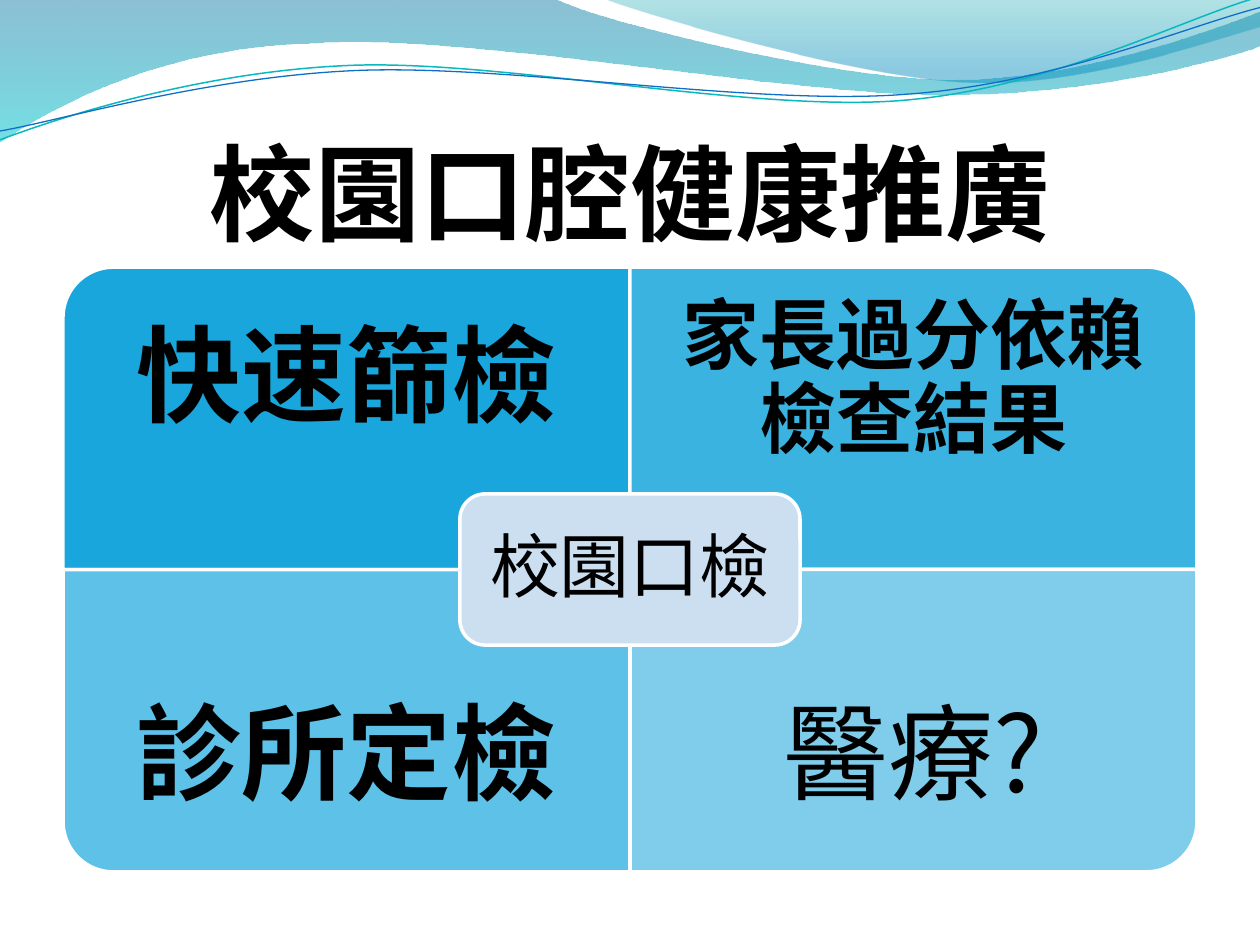
from dataclasses import dataclass

from lxml.etree import SubElement
from pptx import Presentation
from pptx.dml.color import RGBColor
from pptx.enum.shapes import MSO_SHAPE as SHAPE
from pptx.enum.text import MSO_ANCHOR as ANCHOR, PP_ALIGN as ALIGN
from pptx.oxml.ns import qn
from pptx.util import Pt

PX = 9144  # EMU per px, 100 px to the inch


@dataclass(frozen=True)
class Theme:
    black: str = "000000"
    white: str = "FFFFFF"
    panel: str = "009DD9"
    hub: str = "CCDFF1"
    teal_line: str = "0AB8BF"
    blue_line: str = "0F6FC6"
    wave_back: tuple = ((0, "0074A1", 45), (1, "00C6CF", 55))
    wave_front: tuple = ((0, "00A1A9", 30), (0.8, "008BBF", 45))
    cjk: str = "Noto Sans CJK SC"
    serif: str = "TeX Gyre Pagella"
    big: int = 60
    medium: int = 44
    small: int = 40


def px(*values):
    return [round(v * PX) for v in values]


def set_alpha(color_parent, percent):
    for color in color_parent.iter(qn("a:srgbClr")):
        SubElement(color, qn("a:alpha")).set("val", str(percent * 1000))


def bend(sp, segments):
    """Join the three lines of every six-number segment into one cubic curve."""
    outline = next(sp._element.iter(qn("a:path")))
    lines = iter(outline.findall(qn("a:lnTo")))
    for seg in segments:
        first = next(lines)
        if len(seg) == 6:
            first.tag = qn("a:cubicBezTo")
            for line in (next(lines), next(lines)):
                first.append(line[0])
                outline.remove(line)


def write(sp, text, size, bold=False, font=None, anchor=ANCHOR.MIDDLE,
          margins=(0, 0, 0, 0), spacing=0.9):
    tf = sp.text_frame
    tf.word_wrap = True
    tf.vertical_anchor = anchor
    tf.margin_left, tf.margin_top, tf.margin_right, tf.margin_bottom = px(*margins)
    p = tf.paragraphs[0]
    p.alignment = ALIGN.CENTER
    p.line_spacing = spacing
    r = p.add_run()
    r.text = text
    r.font.size = Pt(size)
    r.font.bold = bold
    r.font.name = font or Theme.cjk
    r.font.color.rgb = RGBColor.from_string(Theme.black)
    SubElement(r.font._element, qn("a:ea")).set("typeface", Theme.cjk)


class Painter:
    def __init__(self, slide, theme):
        self.shapes = slide.shapes
        self.theme = theme

    def outline(self, sp, color, width):
        sp.line.color.rgb = RGBColor.from_string(color)
        sp.line.width = Pt(width)

    def curve(self, start, segments, closed):
        """Draw segments of 2 numbers (line end) or 6 (cubic curve)."""
        points = [px(*seg[i:i + 2]) for seg in segments
                  for i in range(0, len(seg), 2)]
        builder = self.shapes.build_freeform(*px(*start))
        builder.add_line_segments(points, close=closed)
        sp = builder.convert_to_shape()
        bend(sp, segments)
        sp.shadow.inherit = False
        return sp

    def wave(self, start, segments, stops):
        sp = self.curve(start, segments + [start], True)
        sp.line.fill.background()
        sp.fill.gradient()
        sp.fill.gradient_angle = 270
        for stop, (position, color, alpha) in zip(sp.fill.gradient_stops, stops):
            stop.position = position
            stop.color.rgb = RGBColor.from_string(color)
            set_alpha(stop._gs, alpha)

    def strand(self, start, segments, color, width):
        sp = self.curve(start, segments, False)
        sp.fill.background()
        self.outline(sp, color, width)

    def box(self, kind, x, y, w, h, color, alpha=None, rotation=0):
        sp = self.shapes.add_shape(kind, *px(x, y, w, h))
        sp.shadow.inherit = False
        sp.rotation = rotation
        sp.fill.solid()
        sp.fill.fore_color.rgb = RGBColor.from_string(color)
        if alpha:
            set_alpha(sp._element.spPr.find(qn("a:solidFill")), alpha)
        self.outline(sp, self.theme.white, 2)
        return sp

    def label(self, x, y, w, h, text, size, **style):
        write(self.shapes.add_textbox(*px(x, y, w, h)), text, size, **style)

    def quadrant(self, col, row, rotation, alpha, text, size, bold, margin):
        """Draw one quarter with its rounded corner turned outwards."""
        w, h, text_h = 450, 240, 180
        x, y = 50 + col * w, 212 + row * h
        shape_w, shape_h = (h, w) if rotation % 180 else (w, h)
        self.box(SHAPE.ROUND_1_RECTANGLE, x + (w - shape_w) / 2,
                 y + (h - shape_h) / 2, shape_w, shape_h,
                 self.theme.panel, alpha, rotation)
        self.label(x, y + row * (h - text_h), w, text_h, text, size,
                   bold=bold, margins=(margin,) * 4)


def main():
    theme = Theme()
    prs = Presentation()
    prs.slide_width, prs.slide_height = px(1000, 750)
    painter = Painter(prs.slides.add_slide(prs.slide_layouts[6]), theme)

    painter.wave((0, 0), [
        (440, -1), (476, 17, 664, 63, 758, 63), (853, 63, 958, 26, 1000, 9),
        (1001, 36), (983, 44, 870, 76, 746, 75), (622, 75, 382, 28, 257, 34),
        (129, 36, 46, 83, -1, 113)], theme.wave_back)
    painter.wave((479, -1), [
        (509, 11, 682, 62, 769, 65), (856, 69, 961, 32, 1000, 21),
        (1000, 0)], theme.wave_front)
    painter.strand((0, 111), [
        (48, 93, 158, 57, 277, 52), (395, 47, 593, 89, 713, 80),
        (833, 71, 938, 15, 998, -2)], theme.teal_line, 0.85)
    painter.strand((0, 104), [
        (47, 96, 164, 61, 283, 56), (403, 51, 597, 84, 717, 75),
        (836, 67, 941, 21, 1000, 6)], theme.blue_line, 0.75)

    painter.label(50, 77, 900, 125, "校園口腔健康推廣", theme.big, bold=True,
                  anchor=ANCHOR.BOTTOM, margins=(0, 5, 0, 0), spacing=1.0)

    for quarter in (
        (0, 0, 270, 90, "快速篩檢", theme.big, True, 47),
        (1, 0, 0, 77, "家長過分依賴檢查結果", theme.medium, True, 34),
        (0, 1, 180, 63, "診所定檢", theme.big, True, 47),
        (1, 1, 90, 50, "醫療?", theme.big, False, 47),
    ):
        painter.quadrant(*quarter)

    hub = painter.box(SHAPE.ROUNDED_RECTANGLE, 365, 392, 270, 120, theme.hub)
    write(hub, "校園口檢", theme.small, font=theme.serif, margins=(17,) * 4)

    prs.save("out.pptx")


if __name__ == "__main__":
    main()
